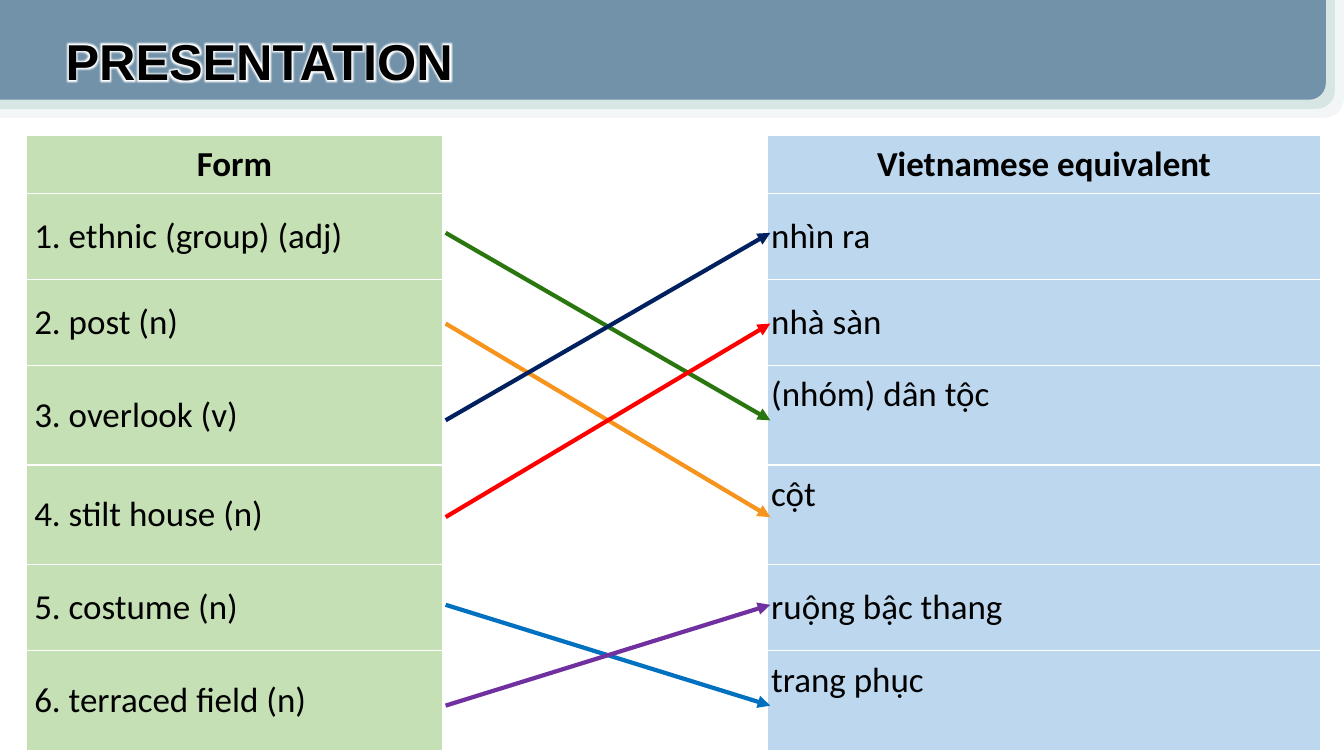
import pptx
import pptx.util
import pptx.dml.color
import pptx.enum.shapes
import pptx.enum.text
import pptx.oxml
import pptx.oxml.ns
from pptx.util import Inches

COLOURS = {
    "outer band": "F3F6F6", "middle band": "D8E5E5", "banner": "7192A9",
    "form": "C5E0B4", "meaning": "BDD7EE", "text": "000000", "grid": "FFFFFF",
    "green": "2A770F", "orange": "F7941E", "navy": "002060",
    "red": "FF0000", "blue": "0070C0", "purple": "7030A0",
}
FORMS = ["1. ethnic (group) (adj)", "2. post (n)", "3. overlook (v)",
         "4. stilt house (n)", "5. costume (n)", "6. terraced field (n)"]
MEANINGS = ["nhìn ra", "nhà sàn", "(nhóm) dân tộc", "cột", "ruộng bậc thang", "trang phục"]
TALL_ROWS = {3, 4, 6}
COLUMN_WIDTHS = [4.13, 3.22, 5.49]
HEADER_HEIGHT, ROW_HEIGHT, TALL_HEIGHT = 0.57, 0.85, 0.99
# Heights of the arrow ends below the top of the table, one per word
ARROW_LEVELS = [0.97, 1.87, 2.83, 3.79, 4.66, 5.66]
# Colour, index of the form, index of its meaning
MATCHES = [("green", 0, 2), ("orange", 1, 3), ("navy", 2, 0),
           ("red", 3, 1), ("blue", 4, 5), ("purple", 5, 4)]


def rgb(name):
    return pptx.dml.color.RGBColor.from_string(COLOURS[name])


def xml(tag, body=""):
    return pptx.oxml.parse_xml(f"<a:{tag} {pptx.oxml.ns.nsdecls('a')}>{body}</a:{tag.split()[0]}>")


def solid(name):
    return f'<a:solidFill><a:srgbClr val="{COLOURS[name]}"/></a:solidFill>'


def style_text(paragraph, font_name, size, bold):
    for run in paragraph.runs:
        run.font.name = font_name
        run.font.size = pptx.util.Pt(size)
        run.font.bold = bold
        run.font.color.rgb = rgb("text")


def add_banner(slide, left, top, width, height):
    """Three stepped bands, the widest at the back, with the title on top."""
    for inset, name in [(0, "outer band"), (0.09, "middle band"), (0.18, "banner")]:
        band = slide.shapes.add_shape(
            pptx.enum.shapes.MSO_SHAPE.ROUND_1_RECTANGLE,
            Inches(left), Inches(top), Inches(width - inset), Inches(height - inset))
        band.element.spPr.xfrm.set("flipV", "1")
        band.shadow.inherit = False
        band.fill.solid()
        band.fill.fore_color.rgb = rgb(name)
        band.line.fill.background()

    title = slide.shapes.title
    title.left, title.top = Inches(left + 0.55), Inches(top + 0.25)
    title.width, title.height = Inches(4.52), Inches(0.71)
    title.text_frame.text = "PRESENTATION"
    title.text_frame.word_wrap = False
    title.text_frame.vertical_anchor = pptx.enum.text.MSO_ANCHOR.MIDDLE
    heading = title.text_frame.paragraphs[0]
    heading.alignment = pptx.enum.text.PP_ALIGN.LEFT
    style_text(heading, "Arial", 36, True)
    glow = f'<a:glow rad="63500"><a:srgbClr val="{COLOURS["grid"]}"/></a:glow>'
    text_fill = next(title.element.iter(pptx.oxml.ns.qn("a:rPr"))).find(
        pptx.oxml.ns.qn("a:solidFill"))
    text_fill.addnext(xml("effectLst", glow))
    title.element.getparent().append(title.element)


def fill_cell(cell, words, fill, alignment, side_margin, bold=False):
    cell.margin_left = cell.margin_right = Inches(side_margin)
    cell.margin_top = cell.margin_bottom = Inches(0.08)
    cell.vertical_anchor = pptx.enum.text.MSO_ANCHOR.MIDDLE
    cell.fill.solid()
    cell.fill.fore_color.rgb = rgb(fill)
    cell.text_frame.text = words
    paragraph = cell.text_frame.paragraphs[0]
    paragraph.alignment = alignment
    style_text(paragraph, "Calibri", 25, bold)


def draw_borders(cell):
    properties = cell._tc.get_or_add_tcPr()
    for position, side in enumerate(["lnL", "lnR", "lnT", "lnB"]):
        properties.insert(position, xml(f'{side} w="12700"', solid("grid")))


def add_word_table(slide, left, top):
    heights = [HEADER_HEIGHT] + [TALL_HEIGHT if row in TALL_ROWS else ROW_HEIGHT
                                 for row in range(1, len(FORMS) + 1)]
    table = slide.shapes.add_table(
        len(heights), len(COLUMN_WIDTHS), Inches(left), Inches(top),
        Inches(sum(COLUMN_WIDTHS)), Inches(sum(heights))).table
    table.first_row = table.horz_banding = False
    for column, width in zip(table.columns, COLUMN_WIDTHS):
        column.width = Inches(width)
    for row, height in zip(table.rows, heights):
        row.height = Inches(height)

    align = pptx.enum.text.PP_ALIGN
    fill_cell(table.cell(0, 0), "Form", "form", align.CENTER, 0.04, bold=True)
    fill_cell(table.cell(0, 2), "Vietnamese equivalent", "meaning", align.CENTER, 0.04, bold=True)
    for row, (form, meaning) in enumerate(zip(FORMS, MEANINGS), start=1):
        fill_cell(table.cell(row, 0), form, "form", align.LEFT, 0.08)
        meaning_cell = table.cell(row, 2)
        fill_cell(meaning_cell, meaning, "meaning", align.JUSTIFY, 0.04)
        if row in TALL_ROWS:
            meaning_cell.margin_bottom = Inches(0.48)
    for row in range(len(heights)):
        table.cell(row, 1).fill.background()
    for cell in table.iter_cells():
        draw_borders(cell)


def add_match_arrows(slide, left, top, width):
    for colour, form, meaning in MATCHES:
        arrow = slide.shapes.add_connector(
            pptx.enum.shapes.MSO_CONNECTOR.STRAIGHT,
            Inches(left), Inches(top + ARROW_LEVELS[form]),
            Inches(left + width), Inches(top + ARROW_LEVELS[meaning]))
        arrow.line.color.rgb = rgb(colour)
        arrow.line.width = pptx.util.Pt(3)
        outline = arrow.element.spPr.find(pptx.oxml.ns.qn("a:ln"))
        outline.append(xml('tailEnd type="triangle"'))
        arrow.element.spPr.append(xml("effectLst"))


def main():
    presentation = pptx.Presentation()
    presentation.slide_width, presentation.slide_height = Inches(13.33), Inches(7.5)
    slide = presentation.slides.add_slide(presentation.slide_layouts.get_by_name("Title Only"))
    add_banner(slide, 0, -0.01, 13.33, 1.18)
    add_word_table(slide, 0.26, 1.34)
    add_match_arrows(slide, 4.42, 1.34, 3.22)
    presentation.save("out.pptx")


if __name__ == "__main__":
    main()
